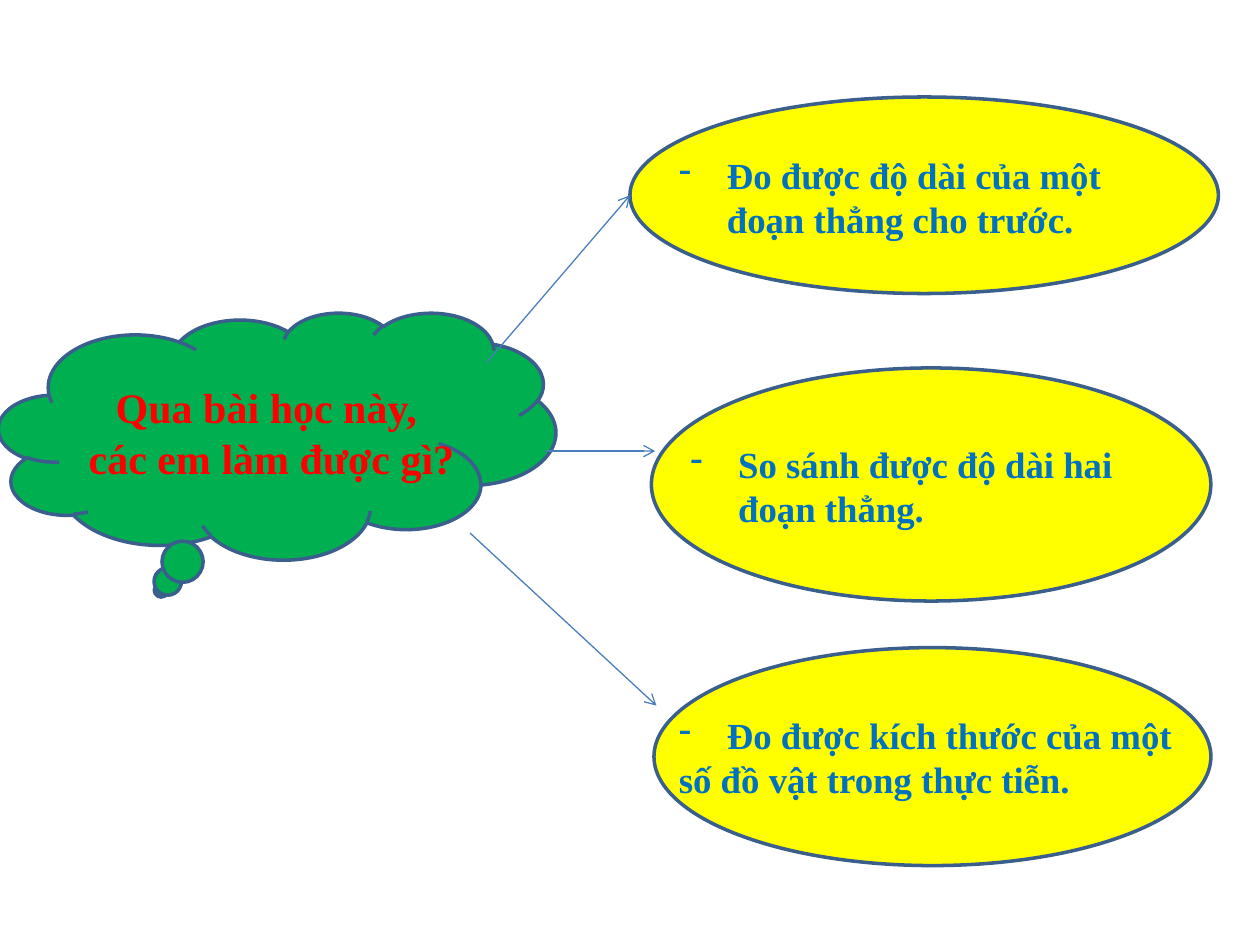
"""Build a lesson recap slide: a thought cloud pointing to three learning outcomes."""
from dataclasses import dataclass

from lxml import etree
from pptx import Presentation
from pptx.dml.color import RGBColor
from pptx.enum.shapes import MSO_CONNECTOR, MSO_SHAPE
from pptx.enum.text import MSO_AUTO_SIZE, PP_ALIGN
from pptx.oxml.ns import qn
from pptx.util import Inches, Pt

CLOUD, ELLIPSE = MSO_SHAPE.CLOUD_CALLOUT, MSO_SHAPE.OVAL
STRAIGHT = MSO_CONNECTOR.STRAIGHT
CENTER, LEFT = PP_ALIGN.CENTER, PP_ALIGN.LEFT
FIT_SHAPE = MSO_AUTO_SIZE.SHAPE_TO_FIT_TEXT


@dataclass(frozen=True)
class Theme:
    """Colours, font and sizes of the slide."""
    font: str = "Times New Roman"
    question_size: float = 24
    outcome_size: float = 21
    question: str = "FF0000"
    outcome: str = "0070C0"
    cloud: str = "00B050"
    ellipse: str = "FFFF00"
    outline: str = "3A5F8C"
    arrow: str = "4B7EBC"
    outline_width: float = 2
    arrow_width: float = 0.75
    indent: float = 0.38


THEME = Theme()
SLIDE_SIZE = (10, 7.5)
QUESTION = {
    "lines": ["Qua bài học này, ", "các em làm được gì?"],
    "shape_box": (-0.01, 2.48, 4.42, 1.96),
    "text_box": (0.59, 2.98, 3.13, 0.91),
}
OUTCOMES = [
    {"lines": ["Đo được độ dài của một đoạn thẳng cho trước."],
     "shape_box": (5, 0.77, 4.67, 1.56), "text_box": (5.29, 1.16, 4.08, 0.81),
     "arrow": ((3.86, 2.88), (5, 1.55))},
    {"lines": ["So sánh được độ dài hai đoạn thẳng."],
     "shape_box": (5.17, 2.92, 4.44, 1.85), "text_box": (5.38, 3.46, 4.08, 0.81),
     "arrow": ((4.33, 3.58), (5.2, 3.58))},
    {"lines": ["Đo được kích thước của một", "số đồ vật trong thực tiễn."],
     "shape_box": (5.19, 5.14, 4.42, 1.73), "text_box": (5.29, 5.61, 5, 0.81),
     "arrow": ((3.73, 4.23), (5.21, 5.6))},
]


def inches(values):
    return [Inches(value) for value in values]


def color(name):
    return RGBColor.from_string(name)


def add_bullet(paragraph):
    properties = paragraph._p.get_or_add_pPr()
    properties.set("marL", str(Inches(THEME.indent)))
    properties.set("indent", str(-Inches(THEME.indent)))
    etree.SubElement(properties, qn("a:buFontTx"))
    etree.SubElement(properties, qn("a:buChar")).set("char", "-")


def add_bubble(slide, content, preset, fill, text_color, size, alignment, bulleted):
    group = slide.shapes.add_group_shape()
    shape = group.shapes.add_shape(preset, *inches(content["shape_box"]))
    shape.shadow.inherit = False
    shape.fill.solid()
    shape.fill.fore_color.rgb = color(fill)
    shape.line.color.rgb = color(THEME.outline)
    shape.line.width = Pt(THEME.outline_width)

    frame = group.shapes.add_textbox(*inches(content["text_box"])).text_frame
    frame.word_wrap = bulleted
    frame.auto_size = FIT_SHAPE
    frame.text = "\n".join(content["lines"])
    for paragraph in frame.paragraphs:
        paragraph.alignment = alignment
        paragraph.font.name = THEME.font
        paragraph.font.size = Pt(size)
        paragraph.font.bold = True
        paragraph.font.color.rgb = color(text_color)
    if bulleted:
        add_bullet(frame.paragraphs[0])


def add_arrow(slide, start, end):
    connector = slide.shapes.add_connector(STRAIGHT, *inches(start + end))
    connector.line.color.rgb = color(THEME.arrow)
    connector.line.width = Pt(THEME.arrow_width)
    etree.SubElement(connector.line._get_or_add_ln(), qn("a:tailEnd")).set("type", "arrow")
    etree.SubElement(connector._element.spPr, qn("a:effectLst"))


def main():
    presentation = Presentation()
    presentation.slide_width, presentation.slide_height = inches(SLIDE_SIZE)
    slide = presentation.slides.add_slide(presentation.slide_layouts.get_by_name("Blank"))
    add_bubble(slide, QUESTION, CLOUD, THEME.cloud, THEME.question,
               THEME.question_size, CENTER, False)
    for outcome in OUTCOMES:
        add_bubble(slide, outcome, ELLIPSE, THEME.ellipse, THEME.outcome,
                   THEME.outcome_size, LEFT, True)
    for outcome in OUTCOMES:
        add_arrow(slide, *outcome["arrow"])
    presentation.save("out.pptx")


if __name__ == "__main__":
    main()
